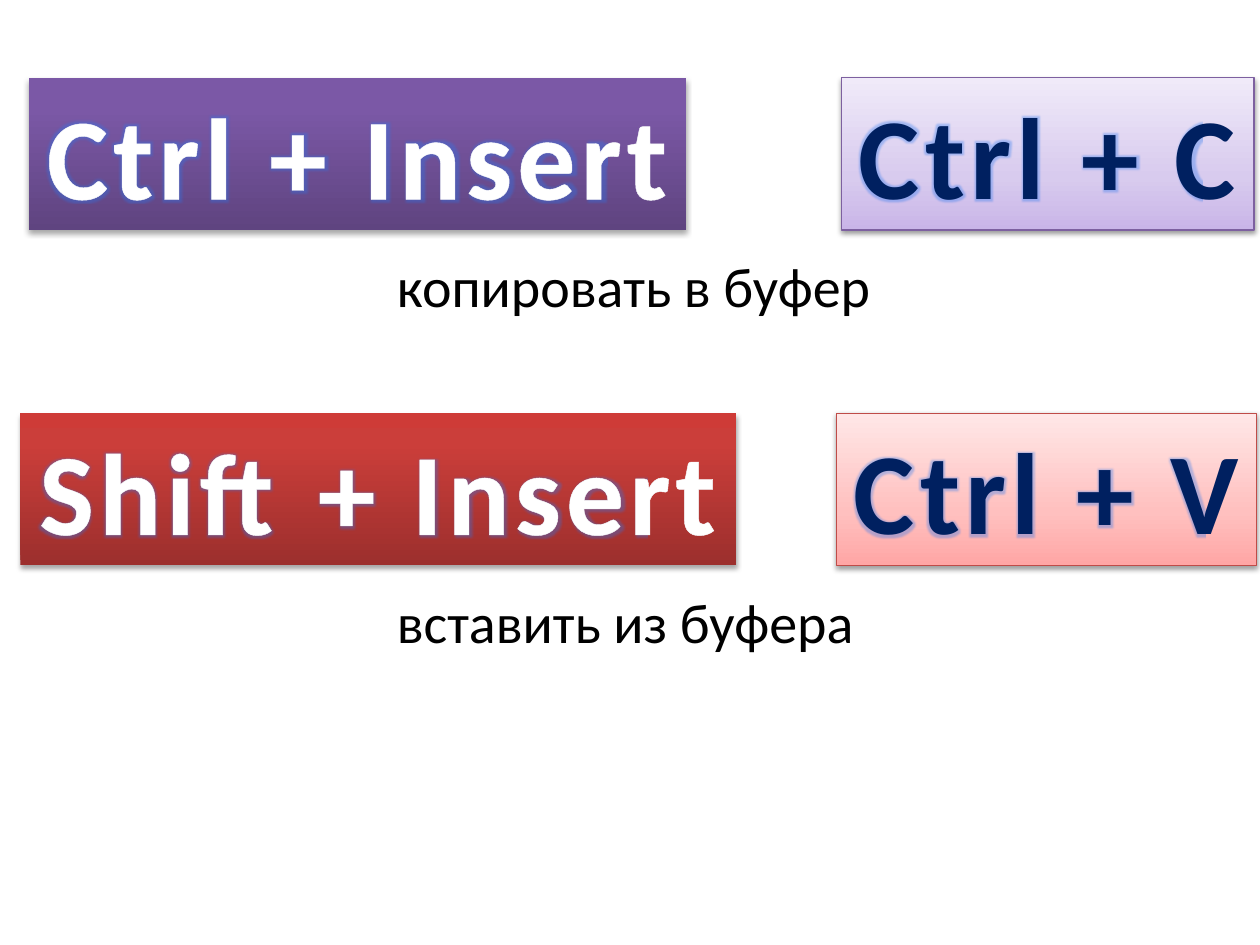
import pptx
import pptx.dml.color
import pptx.enum.shapes
import pptx.enum.text
import pptx.oxml
import pptx.oxml.ns
import pptx.util
from pptx.util import Cm

RGB = pptx.dml.color.RGBColor
WHITE = RGB(0xFF, 0xFF, 0xFF)
BLACK = RGB(0x00, 0x00, 0x00)
NAVY = RGB(0x00, 0x20, 0x60)
OUTLINE = RGB(0xF4, 0xF6, 0xF9)
GLOW = RGB(0x2A, 0x78, 0xF0)
PURPLE_LINE = RGB(0x7D, 0x60, 0xA0)
RED_LINE = RGB(0xBF, 0x4C, 0x48)
PURPLE_DARK = [(0, RGB(0x5F, 0x44, 0x80)), (80, RGB(0x7B, 0x58, 0xA6)), (100, RGB(0x7C, 0x57, 0xA8))]
PURPLE_LIGHT = [(0, RGB(0xC9, 0xB5, 0xE8)), (35, RGB(0xD8, 0xCB, 0xEE)), (100, RGB(0xF0, 0xEA, 0xF9))]
RED_DARK = [(0, RGB(0x9C, 0x2F, 0x2D)), (80, RGB(0xCB, 0x3E, 0x3A)), (100, RGB(0xCE, 0x3B, 0x37))]
RED_LIGHT = [(0, RGB(0xFF, 0xA6, 0xA5)), (35, RGB(0xFF, 0xC0, 0xBF)), (100, RGB(0xFF, 0xE7, 0xE7))]

FONT = "Calibri"
KEY_HEIGHT = 3.07
CAPTION_DROP = 3.38
ROW_TOPS = (1.57, 8.33)


def element(xml):
    """Make an element from XML whose root is in the drawing namespace."""
    head, rest = xml.split(">", 1)
    return pptx.oxml.parse_xml(f"{head} {pptx.oxml.ns.nsdecls('a')}>{rest}")


def add_span(para, text, size, color):
    span = para.add_run()
    span.text = text
    span.font.name = FONT
    span.font.size = pptx.util.Pt(size)
    span.font.color.rgb = color
    return span


def fill_gradient(box, stops):
    """Fill with stops that run from the bottom edge to the top."""
    box.fill.gradient()
    box.fill.gradient_angle = 90
    stop_list = box.fill._fill._gradFill.find(pptx.oxml.ns.qn("a:gsLst"))
    stop_list.clear()
    for percent, color in stops:
        stop_list.append(element(
            f'<a:gs pos="{percent * 1000}"><a:srgbClr val="{color}"/></a:gs>'))


def add_shadow(box, distance, opacity):
    box.shadow.inherit = False
    effects = box._element.spPr.find(pptx.oxml.ns.qn("a:effectLst"))
    effects.append(element(
        f'<a:outerShdw blurRad="{pptx.util.Pt(3.1)}" dist="{pptx.util.Pt(distance)}" '
        f'dir="5400000" rotWithShape="0"><a:srgbClr val="000000">'
        f'<a:alpha val="{opacity * 1000}"/></a:srgbClr></a:outerShdw>'))


def add_glowing_outline(span):
    properties = span.font._element
    properties.set("spc", "300")
    properties.insert(0, element(
        f'<a:ln w="{pptx.util.Pt(0.9)}"><a:solidFill><a:srgbClr val="{OUTLINE}"/>'
        f'</a:solidFill></a:ln>'))
    properties.insert(2, element(
        f'<a:effectLst><a:glow rad="{pptx.util.Pt(3.6)}"><a:srgbClr val="{GLOW}">'
        f'<a:alpha val="35000"/></a:srgbClr></a:glow></a:effectLst>'))


def add_keys(page, text, left, top, width, stops, color, line=None):
    box = page.shapes.add_shape(
        pptx.enum.shapes.MSO_SHAPE.RECTANGLE, Cm(left), Cm(top), Cm(width), Cm(KEY_HEIGHT))
    fill_gradient(box, stops)
    if line is None:
        box.line.fill.background()
        add_shadow(box, 1.8, 35)
    else:
        box.line.color.rgb = line
        box.line.width = pptx.util.Pt(0.75)
        add_shadow(box, 1.6, 38)
    frame = box.text_frame
    frame.word_wrap = False
    frame.auto_size = pptx.enum.text.MSO_AUTO_SIZE.SHAPE_TO_FIT_TEXT
    frame.vertical_anchor = pptx.enum.text.MSO_ANCHOR.TOP
    para = frame.paragraphs[0]
    para.alignment = pptx.enum.text.PP_ALIGN.CENTER
    span = add_span(para, text, 66, color)
    span.font.bold = True
    add_glowing_outline(span)


def add_caption(page, text, row_top):
    box = page.shapes.add_textbox(Cm(7.75), Cm(row_top + CAPTION_DROP), Cm(10.31), Cm(1.62))
    box.text_frame.word_wrap = True
    box.text_frame.auto_size = pptx.enum.text.MSO_AUTO_SIZE.SHAPE_TO_FIT_TEXT
    add_span(box.text_frame.paragraphs[0], text, 32, BLACK)


def main():
    deck = pptx.Presentation()
    deck.slide_width, deck.slide_height = Cm(25.4), Cm(19.05)
    page = deck.slides.add_slide(deck.slide_layouts[6])
    copy_top, paste_top = ROW_TOPS

    add_keys(page, "Ctrl + C", 16.97, copy_top, 8.31, PURPLE_LIGHT, NAVY, PURPLE_LINE)
    add_caption(page, "копировать в буфер", copy_top)
    add_keys(page, "Shift + Insert", 0.41, paste_top, 14.43, RED_DARK, WHITE)
    add_caption(page, "вставить из буфера", paste_top)
    add_keys(page, "Ctrl + Insert", 0.58, copy_top, 13.26, PURPLE_DARK, WHITE)
    add_keys(page, "Ctrl + V", 16.87, paste_top, 8.46, RED_LIGHT, NAVY, RED_LINE)

    deck.save("out.pptx")


if __name__ == "__main__":
    main()
